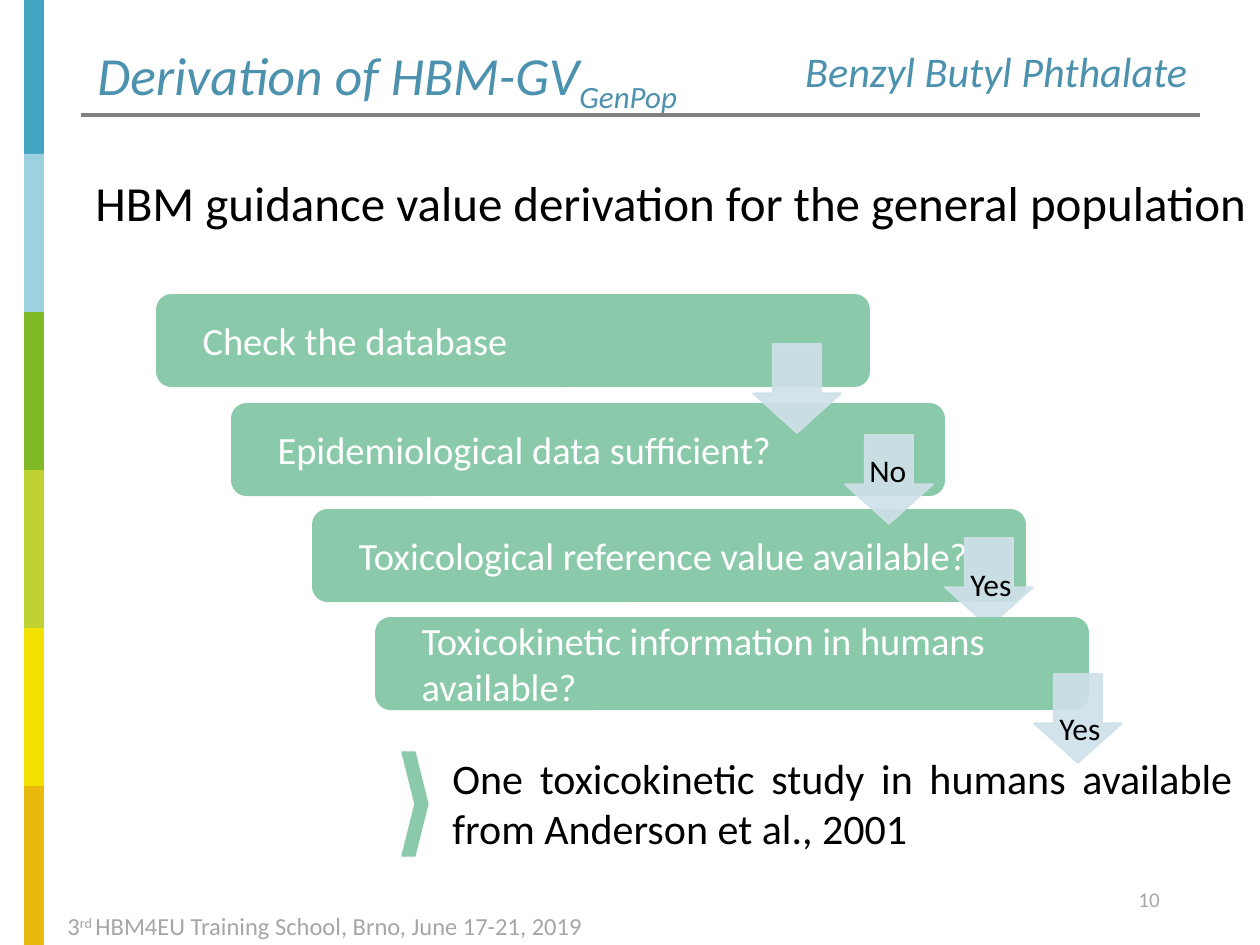
from dataclasses import dataclass

from lxml import etree
from pptx import Presentation
from pptx.dml.color import RGBColor
from pptx.enum.shapes import MSO_CONNECTOR, MSO_SHAPE
from pptx.enum.text import MSO_ANCHOR, PP_ALIGN
from pptx.oxml.ns import qn
from pptx.util import Emu, Pt

RECT = MSO_SHAPE.RECTANGLE
ROUND_RECT = MSO_SHAPE.ROUNDED_RECTANGLE
DOWN_ARROW = MSO_SHAPE.DOWN_ARROW
CHEVRON = MSO_SHAPE.CHEVRON
STRAIGHT = MSO_CONNECTOR.STRAIGHT
TOP, MIDDLE = MSO_ANCHOR.TOP, MSO_ANCHOR.MIDDLE
LEFT, RIGHT, JUSTIFY = PP_ALIGN.LEFT, PP_ALIGN.RIGHT, PP_ALIGN.JUSTIFY


@dataclass(frozen=True)
class Theme:
    font: str = "Calibri"
    bars: tuple = ("43A5C1", "9ED1DF", "80BA27", "C0D232", "F3E100", "EAB90F")
    title: str = "4C91AE"
    rule: str = "808080"
    step: str = "8AC9A9"
    arrow: str = "CFE1E9"
    text: str = "000000"
    light: str = "FFFFFF"
    muted: str = "A6A6A6"
    title_size: float = 30.6
    subtitle_size: float = 24.1
    heading_size: int = 28
    result_size: int = 24
    step_size: int = 22
    label_size: int = 18
    footer_size: int = 14
    number_size: int = 12


THEME = Theme()


def px(n):
    return Emu(round(n * 914400 / 126))


def write(tf, runs, size, color, align=LEFT, anchor=TOP, spacing=None, italic=False):
    """Fill a text frame with one paragraph of (text, baseline percent) runs."""
    tf.word_wrap = True
    tf.vertical_anchor = anchor
    p = tf.paragraphs[0]
    p.alignment = align
    p.line_spacing = spacing
    for text, baseline in runs:
        r = p.add_run()
        r.text = text
        r.font.name = THEME.font
        r.font.size = Pt(size)
        r.font.italic = italic
        r.font.color.rgb = RGBColor.from_string(color)
        if baseline:
            r.font.italic = italic
            r._r.get_or_add_rPr().set("baseline", str(baseline * 1000))
    return p


def add_text(s, box, runs, size, color, **style):
    tb = s.shapes.add_textbox(*map(px, box))
    return write(tb.text_frame, runs, size, color, **style)


def add_shape(s, kind, box, color, adjust=(), line=None):
    sp = s.shapes.add_shape(kind, *map(px, box))
    sp.shadow.inherit = False
    sp.fill.solid()
    sp.fill.fore_color.rgb = RGBColor.from_string(color)
    if line:
        sp.line.color.rgb = RGBColor.from_string(color)
        sp.line.width = Pt(line)
    else:
        sp.line.fill.background()
    for i, value in enumerate(adjust):
        sp.adjustments[i] = value
    return sp


def add_side_bars(s, box):
    # The first bar is cut short by the top edge; each bar overlaps the next by 1 px
    x, y, w, h = box
    pitch, first = 158, 154
    for i, color in enumerate(THEME.bars):
        top = y + first + (i - 1) * pitch if i else y
        bottom = y + first + i * pitch + 1
        add_shape(s, RECT, (x, top, w, bottom - top), color)


def add_header(s, box):
    x, y, w, h = box
    # Rule below the titles
    line = s.shapes.add_connector(STRAIGHT, px(x), px(y + h), px(x + w), px(y + h))
    line.line.color.rgb = RGBColor.from_string(THEME.rule)
    line.line.width = Pt(2)
    etree.SubElement(line._element.spPr, qn("a:effectLst"))
    # Title and substance name
    add_text(s, (x + 4, y, w - 6, 55), [("Derivation of HBM-GV", 0), ("GenPop", -25)],
             THEME.title_size, THEME.title, anchor=MIDDLE, spacing=0.9, italic=True)
    add_text(s, (x + w - 467, y, 467, 55), [("Benzyl Butyl Phthalate", 0)],
             THEME.subtitle_size, THEME.title, align=RIGHT, anchor=MIDDLE,
             spacing=0.8, italic=True)


def add_step(s, box, text):
    sp = add_shape(s, ROUND_RECT, box, THEME.step, [0.167])
    sp.text_frame.margin_left = px(42)
    write(sp.text_frame, [(text, 0)], THEME.step_size, THEME.light, anchor=MIDDLE)


def add_arrow(s, box, label, label_at):
    sp = add_shape(s, DOWN_ARROW, box, THEME.arrow, [0.55, 0.45], line=1)
    for clr in sp._element.spPr.iter(qn("a:srgbClr")):
        etree.SubElement(clr, qn("a:alpha")).set("val", "90000")
    if label:
        dx, dy = label_at
        add_text(s, (box[0] + dx, box[1] + dy, 72, 50), [(label, 0)],
                 THEME.label_size, THEME.text)


def add_flow(s, box):
    x, y, w, h = box
    # Step offset, text, arrow offset, arrow label, label offset within the arrow
    steps = [
        ((0, 0), "Check the database", (597, 50), "", None),
        ((75, 109), "Epidemiological data sufficient?", (689, 141), "No", (12, 10)),
        ((156, 215), "Toxicological reference value available?", (789, 244),
         "Yes", (13, 21)),
        ((219, 323), "Toxicokinetic information in humans available?", (878, 380),
         "Yes", (13, 29)),
    ]
    # The last step lies over the arrow that leads to it
    for group in (steps[:3], steps[3:]):
        for (dx, dy), text, *_ in group:
            add_step(s, (x + dx, y + dy, 714, 93), text)
        for _, _, (dx, dy), label, label_at in group:
            add_arrow(s, (x + dx, y + dy, 88, 89), label, label_at)


def add_result(s, box):
    x, y, w, h = box
    add_shape(s, CHEVRON, (x, y + 6, 26, 104), THEME.step, [0.5], line=0.75)
    p = add_text(s, (x + 38, y, w - 38, h),
                 [("One toxicokinetic study in humans available "
                   "from Anderson et al., 2001", 0)],
                 THEME.result_size, THEME.text, align=JUSTIFY)
    p.space_after = Pt(6)


def add_footer(s, box):
    x, y, w, h = box
    add_text(s, (x + w - 70, y, 70, 50), [("10", 0)], THEME.number_size, THEME.muted)
    add_text(s, (x, y + 25, 638, 50),
             [("3", 0), ("rd ", 30), ("HBM4EU Training School, Brno, June 17-21, 2019", 0)],
             THEME.footer_size, THEME.muted)


def main():
    prs = Presentation()
    prs.slide_width, prs.slide_height = px(1260), px(945)
    s = prs.slides.add_slide(prs.slide_layouts[6])
    add_side_bars(s, (24, 0, 20, 945))
    add_header(s, (81, 48, 1119, 67))
    add_text(s, (83, 173, 1188, 93),
             [("HBM guidance value derivation for the general population", 0)],
             THEME.heading_size, THEME.text, spacing=0.9)
    add_flow(s, (156, 294, 966, 469))
    add_result(s, (402, 746, 843, 115))
    add_footer(s, (55, 880, 1141, 75))
    prs.save("out.pptx")


if __name__ == "__main__":
    main()
